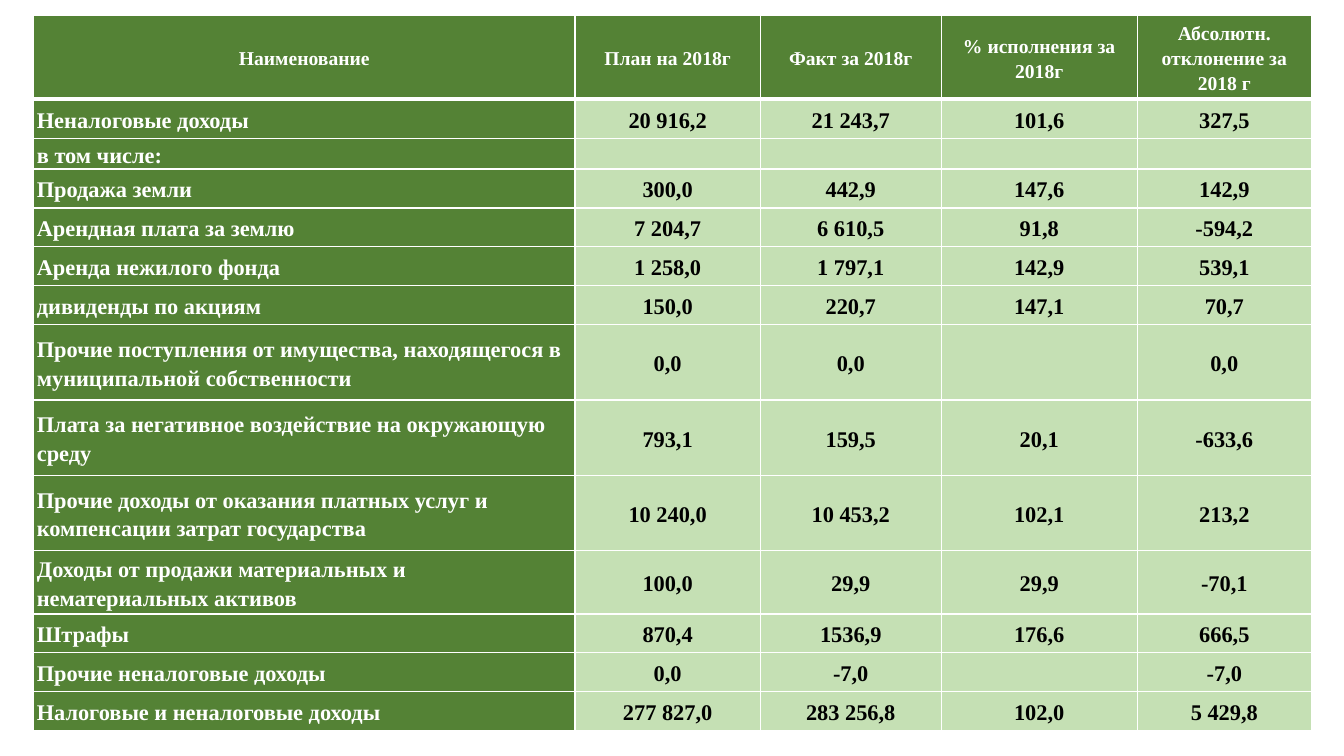
from lxml.etree import SubElement
from pptx import Presentation
from pptx.dml.color import RGBColor
from pptx.enum.text import MSO_ANCHOR, PP_ALIGN
from pptx.oxml.ns import qn
from pptx.util import Cm, Pt

THEME = {
    "font": "Times New Roman",
    "dark": "548235",
    "light": "C5E0B4",
    "white": "FFFFFF",
    "black": "000000",
    "header_size": 14,
    "body_size": 16,
    "thin": 1,
    "thick": 3,
}
CELL_FORMAT = {
    "margin_left": Cm(0.08),
    "margin_right": Cm(0.08),
    "margin_top": 0,
    "margin_bottom": 0,
    "vertical_anchor": MSO_ANCHOR.MIDDLE,
}
COLUMN_WIDTHS = [13.64, 4.67, 4.56, 4.94, 4.39]
HEADER = ["Наименование", "План на 2018г", "Факт за 2018г",
          "% исполнения за 2018г", "Абсолютн. отклонение за 2018 г"]
HEADER_HEIGHT = 2.11
INCOME_ROWS = [
    (0.98, ["Неналоговые доходы", "20 916,2", "21 243,7", "101,6", "327,5"]),
    (0.78, ["в том числе:", "", "", "", ""]),
    (0.98, ["Продажа земли", "300,0", "442,9", "147,6", "142,9"]),
    (0.98, ["Арендная плата за землю", "7 204,7", "6 610,5", "91,8", "-594,2"]),
    (0.98, ["Аренда нежилого фонда", "1 258,0", "1 797,1", "142,9", "539,1"]),
    (0.98, ["дивиденды по акциям", "150,0", "220,7", "147,1", "70,7"]),
    (1.9, ["Прочие поступления от имущества, находящегося в муниципальной собственности",
           "0,0", "0,0", "", "0,0"]),
    (1.9, ["Плата за негативное воздействие на окружающую среду",
           "793,1", "159,5", "20,1", "-633,6"]),
    (1.9, ["Прочие доходы от оказания платных услуг и компенсации затрат государства",
           "10 240,0", "10 453,2", "102,1", "213,2"]),
    (1.59, ["Доходы от продажи материальных и нематериальных активов",
            "100,0", "29,9", "29,9", "-70,1"]),
    (0.98, ["Штрафы", "870,4", "1536,9", "176,6", "666,5"]),
    (0.98, ["Прочие неналоговые доходы", "0,0", "-7,0", "", "-7,0"]),
    (0.98, ["Налоговые и неналоговые доходы", "277 827,0", "283 256,8", "102,0", "5 429,8"]),
]


def add_borders(cell, top, bottom):
    """Draw white cell borders; top and bottom are widths in points."""
    properties = cell._tc.get_or_add_tcPr()
    widths = {"a:lnL": THEME["thin"], "a:lnR": THEME["thin"], "a:lnT": top, "a:lnB": bottom}
    for tag, width in widths.items():
        line = SubElement(properties, qn(tag), w=str(Pt(width)))
        fill = SubElement(line, qn("a:solidFill"))
        SubElement(fill, qn("a:srgbClr"), val=THEME["white"])


def write_text(cell, text, size, color, alignment):
    paragraph = cell.text_frame.paragraphs[0]
    paragraph.alignment = alignment
    if not text:
        end = SubElement(paragraph._p, qn("a:endParaRPr"), sz=str(size * 100))
        SubElement(end, qn("a:latin"), typeface=THEME["font"])
        return
    paragraph.line_spacing = 1.15
    run = paragraph.add_run()
    run.text = text
    font_format = {"name": THEME["font"], "size": Pt(size), "bold": True}
    for name, value in font_format.items():
        setattr(run.font, name, value)
    run.font.color.rgb = RGBColor.from_string(color)


presentation = Presentation()
presentation.slide_width = Cm(33.87)
presentation.slide_height = Cm(19.05)
slide = presentation.slides.add_slide(presentation.slide_layouts[6])

table_rows = [(HEADER_HEIGHT, HEADER)] + INCOME_ROWS
table_height = sum(height for height, texts in table_rows)
table = slide.shapes.add_table(
    len(table_rows), len(COLUMN_WIDTHS),
    Cm(0.85), Cm(0.39), Cm(sum(COLUMN_WIDTHS)), Cm(table_height)).table

for column, width in zip(table.columns, COLUMN_WIDTHS):
    column.width = Cm(width)

for row_index, (height, texts) in enumerate(table_rows):
    table.rows[row_index].height = Cm(height)
    is_header = row_index == 0
    for column_index, text in enumerate(texts):
        cell = table.cell(row_index, column_index)
        is_name = column_index == 0
        is_dark = is_header or is_name
        for name, value in CELL_FORMAT.items():
            setattr(cell, name, value)
        add_borders(cell,
                    top=THEME["thick" if row_index == 1 else "thin"],
                    bottom=THEME["thick" if is_header else "thin"])
        cell.fill.solid()
        cell.fill.fore_color.rgb = RGBColor.from_string(THEME["dark" if is_dark else "light"])
        write_text(cell, text,
                   size=THEME["header_size" if is_header else "body_size"],
                   color=THEME["white" if is_dark else "black"],
                   alignment=PP_ALIGN.LEFT if is_name and not is_header else PP_ALIGN.CENTER)

presentation.save("out.pptx")
